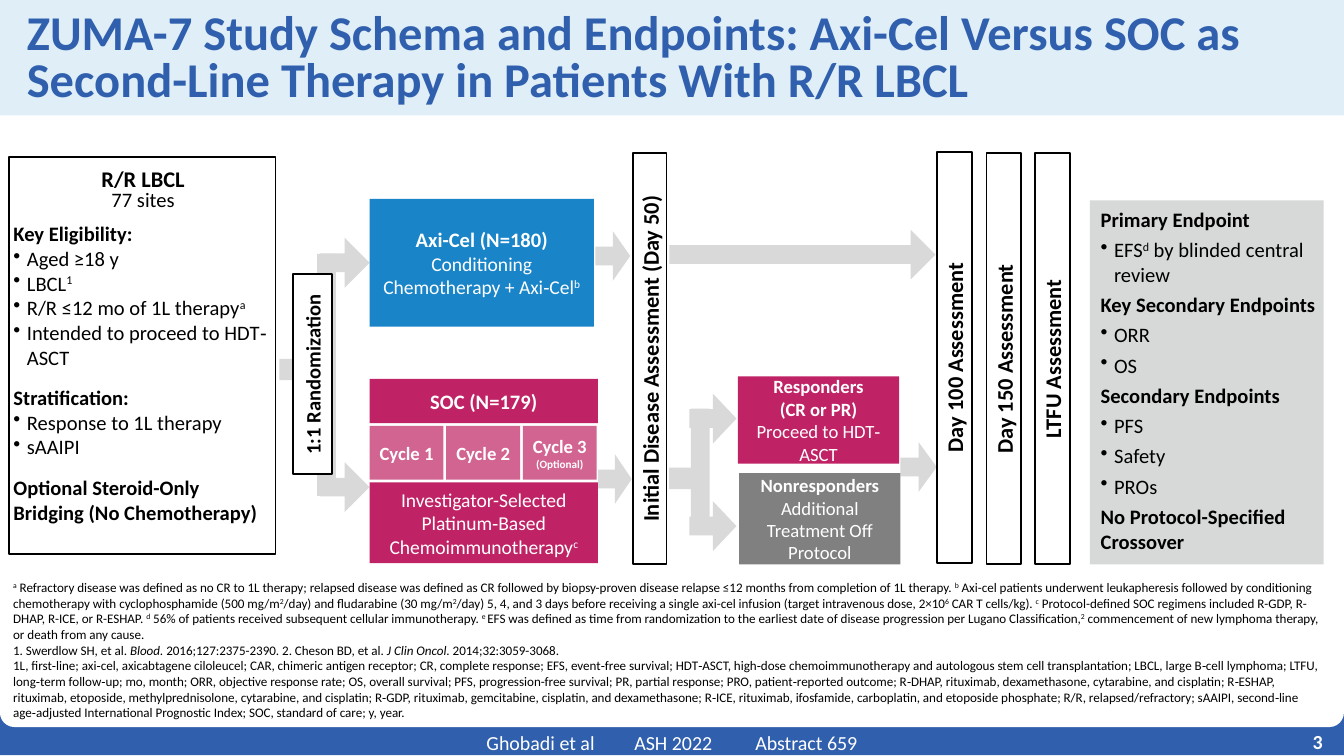
"""Builds the ZUMA-7 study schema and endpoints slide."""
from dataclasses import dataclass

from lxml import etree
from pptx import Presentation
from pptx.dml.color import RGBColor
from pptx.enum.shapes import MSO_SHAPE
from pptx.enum.text import MSO_ANCHOR, PP_ALIGN
from pptx.oxml.ns import qn
from pptx.util import Inches, Pt

RECTANGLE = MSO_SHAPE.RECTANGLE
ARROW = MSO_SHAPE.RIGHT_ARROW
ROUNDED = MSO_SHAPE.ROUND_2_SAME_RECTANGLE
LEFT, CENTER, RIGHT = PP_ALIGN.LEFT, PP_ALIGN.CENTER, PP_ALIGN.RIGHT
TOP, MIDDLE, BOTTOM = MSO_ANCHOR.TOP, MSO_ANCHOR.MIDDLE, MSO_ANCHOR.BOTTOM


@dataclass(frozen=True)
class Theme:
    font: str = "Calibri"
    white: str = "FFFFFF"
    black: str = "000000"
    navy: str = "3060AD"
    pale: str = "DFEEF7"
    blue: str = "1984C8"
    magenta: str = "BF2365"
    gray: str = "808080"
    arrow: str = "D9D9D9"
    panel: str = "D7D8D8"
    title: float = 26
    heading: float = 12
    body: float = 11
    detail: float = 10.5
    small: float = 10
    footer: float = 10.7
    note: float = 7
    tiny: float = 6


THEME = Theme()
presentation = Presentation()
presentation.slide_width = Inches(10)
presentation.slide_height = Inches(10) * 9 // 16
slide = presentation.slides.add_slide(presentation.slide_layouts[6])


def draw(kind, bounds, fill, outlined=False):
    """Add a filled preset shape."""
    shape = slide.shapes.add_shape(kind, *map(Inches, bounds))
    shape.shadow.inherit = False
    shape.fill.solid()
    shape.fill.fore_color.rgb = RGBColor.from_string(fill)
    if outlined:
        shape.line.color.rgb = RGBColor.from_string(THEME.black)
        shape.line.width = Pt(1)
    else:
        shape.line.fill.background()
    if kind == ARROW:
        shape.adjustments[0] = 0.375
    return shape


def write(shape, lines, size, color=THEME.white, align=CENTER, anchor=MIDDLE,
          margins=(0.05, 0.05, 0.05, 0.05), after=0):
    """Write lines in which * toggles bold, _ italic and ^ superscript."""
    frame = shape.text_frame
    frame.word_wrap = True
    frame.vertical_anchor = anchor
    (frame.margin_left, frame.margin_top,
     frame.margin_right, frame.margin_bottom) = map(Inches, margins)
    for index, line in enumerate(lines):
        text, line_size = line if isinstance(line, tuple) else (line, size)
        paragraph = frame.paragraphs[0] if index == 0 else frame.add_paragraph()
        paragraph.alignment = align
        paragraph.space_after = Pt(after)
        if text.startswith("•"):
            text = text[1:]
            properties = paragraph._p.get_or_add_pPr()
            properties.set("marL", str(Inches(0.1)))
            properties.set("indent", str(-Inches(0.1)))
            etree.SubElement(properties, qn("a:buChar")).set("char", "•")
        active, buffer = set(), ""
        for character in text + "\n":
            if character not in "*_^\n":
                buffer += character
                continue
            if buffer:
                run = paragraph.add_run()
                run.text = buffer
                run.font.name = THEME.font
                run.font.size = Pt(line_size)
                run.font.color.rgb = RGBColor.from_string(color)
                run.font.bold = "*" in active
                run.font.italic = "_" in active
                if "^" in active:
                    run._r.get_or_add_rPr().set("baseline", "30000")
            active ^= {character}
            buffer = ""
    return frame


draw(RECTANGLE, (0, 5.06, 10, 0.56), THEME.navy)
page = draw(ROUNDED, (0, 0, 10, 5.41), THEME.white)
page.adjustments[0], page.adjustments[1] = 0, 0.02

footer = slide.shapes.add_textbox(*map(Inches, (0, 5.42, 10, 0.21)))
frame = write(footer, ["Ghobadi et al\tASH 2022\tAbstract 659"], THEME.footer,
              align=LEFT, margins=(3.62, 0, 0, 0))
tabs = etree.SubElement(frame.paragraphs[0]._p.get_or_add_pPr(), qn("a:tabLst"))
for position in (1.1, 2):
    tab = etree.SubElement(tabs, qn("a:tab"))
    tab.set("pos", str(Inches(position)))
    tab.set("algn", "l")

title = draw(RECTANGLE, (0, 0, 10, 0.86), THEME.pale)
frame = write(title, ["*ZUMA-7 Study Schema and Endpoints: Axi-Cel Versus SOC as "
                      "Second-Line Therapy in Patients With R/R LBCL"],
              THEME.title, THEME.navy, LEFT, TOP, (0.2, 0.1, 0.2, 0))
frame.paragraphs[0].line_spacing = 0.8

definitions = (
    "^a^ Refractory disease was defined as no CR to 1L therapy; relapsed disease was defined as CR "
    "followed by biopsy-proven disease relapse ≤12 months from completion of 1L therapy.",
    "^b^ Axi-cel patients underwent leukapheresis followed by conditioning chemotherapy with "
    "cyclophosphamide (500 mg/m^2^/day) and fludarabine (30 mg/m^2^/day) 5, 4, and 3 days before "
    "receiving a single axi-cel infusion (target intravenous dose, 2×10^6^ CAR T cells/kg).",
    "^c^ Protocol-defined SOC regimens included R-GDP, R-DHAP, R-ICE, or R-ESHAP.",
    "^d^ 56% of patients received subsequent cellular immunotherapy.",
    "^e ^EFS was defined as time from randomization to the earliest date of disease progression per "
    "Lugano Classification,^2^ commencement of new lymphoma therapy, or death from any cause.",
)
references = ("1. Swerdlow SH, et al. _Blood. _2016;127:2375-2390.",
              "2. Cheson BD, et al. _J Clin Oncol. _2014;32:3059-3068.")
abbreviations = (
    "1L, first‑line; axi‑cel, axicabtagene ciloleucel; CAR, chimeric antigen receptor; CR, complete "
    "response; EFS, event‑free survival; HDT‑ASCT, high‑dose chemoimmunotherapy and autologous stem "
    "cell transplantation; LBCL, large B‑cell lymphoma; LTFU, long‑term follow‑up; mo, month;",
    "ORR, objective response rate; OS, overall survival; PFS, progression-free survival; PR, partial "
    "response; PRO, patient‑reported outcome; R‑DHAP, rituximab, dexamethasone, cytarabine, and "
    "cisplatin; R‑ESHAP, rituximab, etoposide, methylprednisolone, cytarabine, and cisplatin;",
    "R‑GDP, rituximab, gemcitabine, cisplatin, and dexamethasone; R‑ICE, rituximab, ifosfamide, "
    "carboplatin, and etoposide phosphate; R/R, relapsed/refractory; sAAIPI, second‑line "
    "age‑adjusted International Prognostic Index; SOC, standard of care; y, year.",
)
notes = slide.shapes.add_textbox(*map(Inches, (0, 4.25, 10, 1.16)))
write(notes, map(" ".join, (definitions, references, abbreviations)),
      THEME.note, THEME.black, LEFT, BOTTOM, (0.1, 0.05, 0.1, 0.05))

number = slide.shapes.add_textbox(*map(Inches, (9.31, 5.37, 0.63, 0.3)))
write(number, ["*3"], THEME.footer, align=RIGHT, margins=(0.1, 0.05, 0.1, 0.05))

for bounds in ((4.98, 3.48, 0.26, 0.16), (5.14, 3.04, 0.14, 0.86),
               (2.08, 2.67, 0.4, 0.16), (2.36, 1.89, 0.14, 1.8)):
    draw(RECTANGLE, bounds, THEME.arrow)
for left, top, width in ((4.98, 1.71, 1.98), (4.43, 1.72, 0.26), (4.45, 3.38, 0.25),
                         (2.38, 3.44, 0.37), (2.38, 1.77, 0.37), (5.13, 2.93, 0.35),
                         (5.13, 3.73, 0.35), (6.7, 3.29, 0.27)):
    draw(ARROW, (left, top, width, 0.37), THEME.arrow)

for bounds, fill, size, lines in (
    ((2.75, 2.82, 1.7, 0.33), THEME.magenta, THEME.body, ["*SOC (N=179)"]),
    ((2.75, 1.48, 1.67, 0.95), THEME.blue, THEME.detail,
     [("*Axi-Cel (N=180)", THEME.body), "Conditioning Chemotherapy + Axi‐Cel^b"]),
    ((5.49, 2.8, 1.2, 0.65), THEME.magenta, THEME.small,
     ["*Responders", "*(CR or PR)", "Proceed to HDT‐ASCT"]),
    ((5.5, 3.52, 1.2, 0.68), THEME.gray, THEME.small,
     ["*Nonresponders", "Additional Treatment Off Protocol"]),
    ((2.75, 3.59, 1.7, 0.6), THEME.magenta, THEME.detail,
     ["Investigator-Selected Platinum‐Based Chemoimmunotherapy^c"]),
):
    write(draw(RECTANGLE, bounds, fill), lines, size)

for index, extra in enumerate(([], [], [("*(Optional)", THEME.tiny)])):
    cycle = draw(RECTANGLE, (2.75 + 0.57 * index, 3.17, 0.55, 0.4), THEME.magenta)
    color = cycle.fill._xPr.find(".//" + qn("a:srgbClr"))
    etree.SubElement(color, qn("a:alpha")).set("val", "70000")
    write(cycle, [f"*Cycle {index + 1}", *extra], THEME.small, margins=(0.02, 0.05, 0.02, 0.05))

for bounds, size, label in (
    ((2.18, 2.04, 0.29, 1.49), THEME.body, "1:1 Randomization"),
    ((4.71, 1.14, 0.25, 3.06), THEME.heading, "Initial Disease Assessment (Day 50)"),
    ((6.97, 1.13, 0.26, 3.06), THEME.heading, "Day 100 Assessment"),
    ((7.34, 1.14, 0.26, 3.06), THEME.heading, "Day 150 Assessment"),
    ((7.7, 1.14, 0.26, 3.06), THEME.heading, "LTFU Assessment"),
):
    frame = write(draw(RECTANGLE, bounds, THEME.white, True), ["*" + label], size,
                  THEME.black, margins=(0, 0, 0, 0))
    frame._txBody.bodyPr.set("vert", "vert270")

eligibility = draw(RECTANGLE, (0.07, 1.17, 1.98, 2.95), THEME.white, True)
frame = write(eligibility, [
    ("*R/R LBCL", THEME.heading), "77 sites", "*Key Eligibility:", "•Aged ≥18 y", "•LBCL^1",
    "•R/R ≤12 mo of 1L therapy^a", "•Intended to proceed to HDT‐ASCT", "*Stratification:",
    "•Response to 1L therapy", "•sAAIPI", "*Optional Steroid-Only Bridging (No Chemotherapy)",
], THEME.body, THEME.black, LEFT, TOP, (0.03, 0.1, 0.02, 0.1))
for paragraph in frame.paragraphs[:2]:
    paragraph.alignment = CENTER
    paragraph.line_spacing = 0.8
for index, gap in ((2, 5), (7, 8.5), (10, 8.5)):
    frame.paragraphs[index].space_before = Pt(gap)

endpoints = draw(RECTANGLE, (8.11, 1.49, 1.74, 2.71), THEME.panel)
write(endpoints, [
    "*Primary Endpoint", "•EFS^d^ by blinded central review", "*Key Secondary Endpoints", "•ORR",
    "•OS", "*Secondary Endpoints", "•PFS", "•Safety", "•PROs", "*No Protocol-Specified Crossover",
], THEME.body, THEME.black, LEFT, TOP, (0.08, 0.05, 0.05, 0.1), after=3)

presentation.save("out.pptx")
